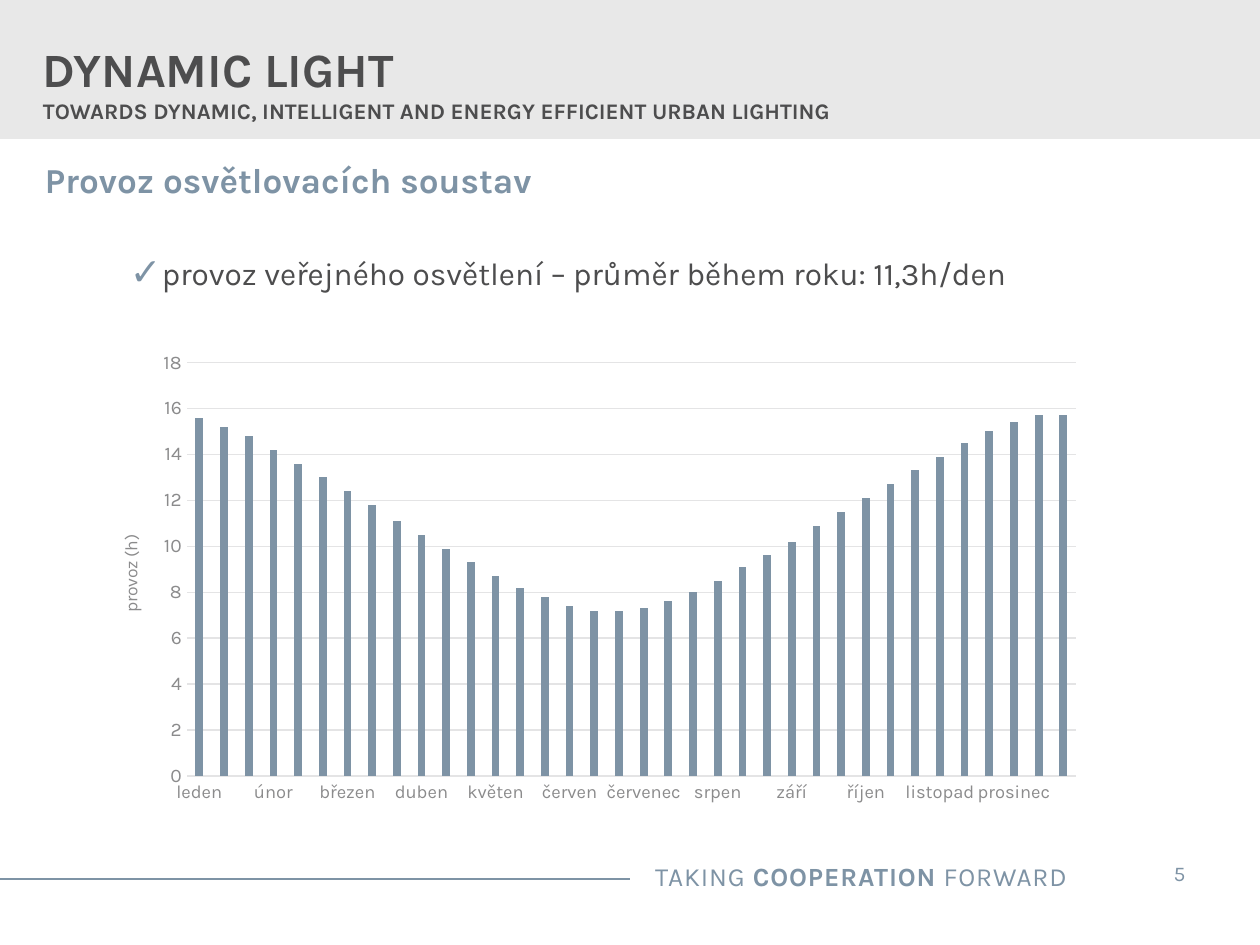
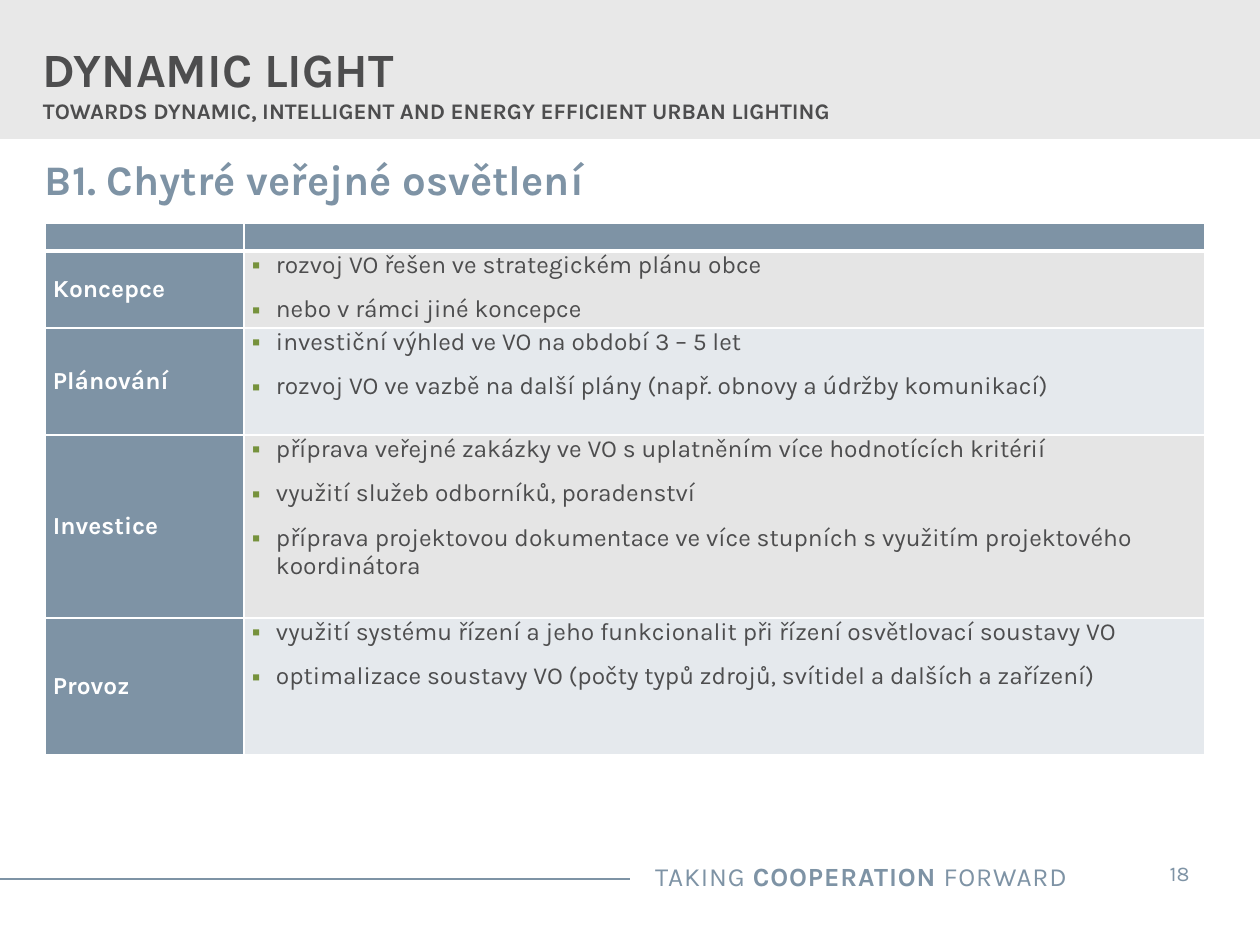
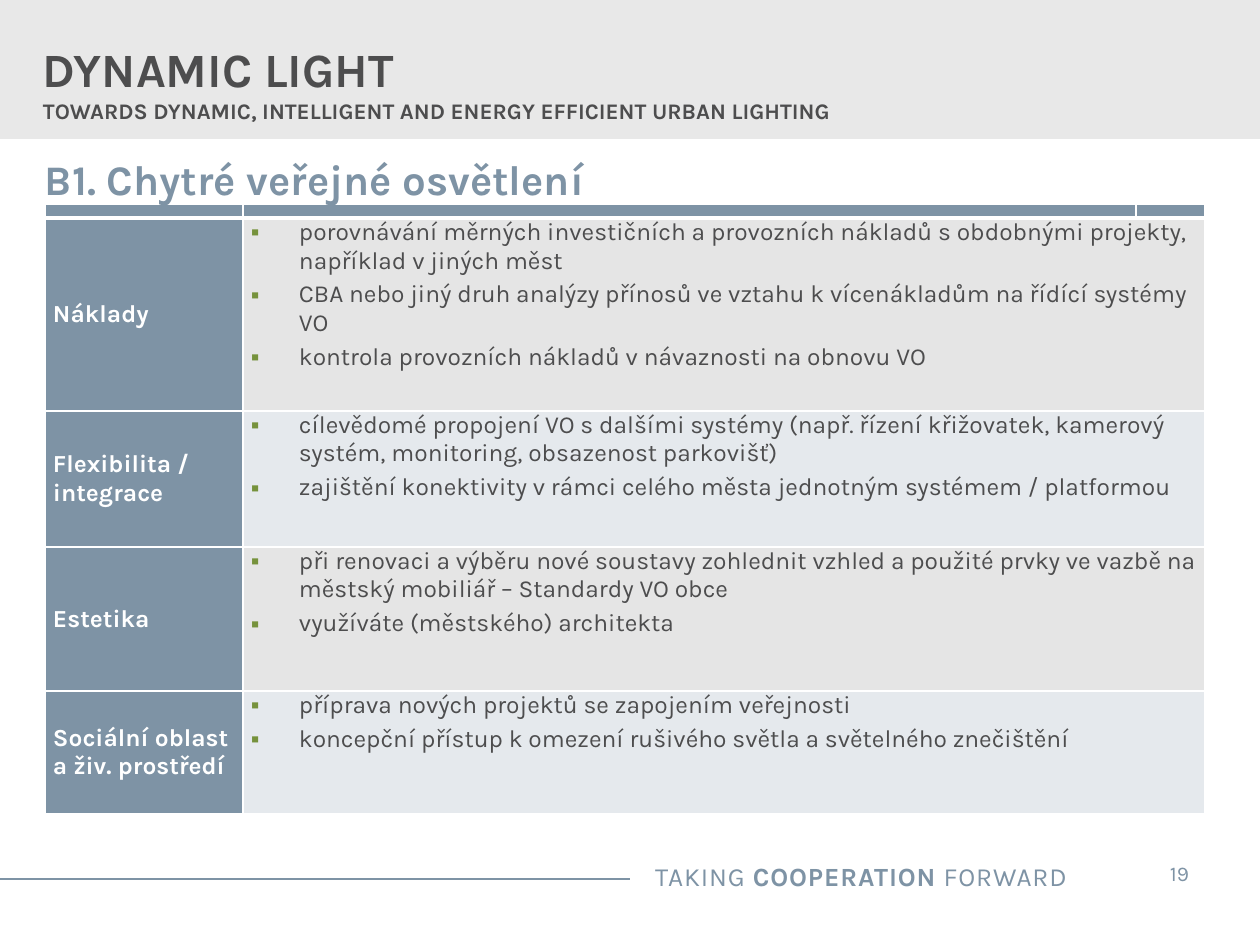
from dataclasses import dataclass

from lxml import etree
from pptx import Presentation
from pptx import util as u
from pptx.chart import data as chart_data
from pptx.dml import color as colors
from pptx.enum import chart as charts
from pptx.enum import shapes, text
from pptx.oxml import ns

SCALE = 914400 / 126


@dataclass(frozen=True)
class Theme:
    """Colours, type sizes and font shared by all slides."""

    font: str = "Karla"
    blue: str = "7E93A5"
    dark: str = "4D4D4E"
    grey: str = "8B8B8C"
    band: str = "E8E8E8"
    grid: str = "E4E4E5"
    green: str = "76923C"
    white: str = "FFFFFF"
    rows: tuple = ("E5E5E5", "E5E9ED")
    brand: float = 27.3
    motto: float = 12.7
    tagline: float = 15
    number: float = 12
    lead: float = 18
    cell: float = 14
    axis: float = 11
    category: float = 10.5
    axis_title: float = 10


THEME = Theme()

HOURS = [15.6, 15.2, 14.8, 14.2, 13.6, 13, 12.4, 11.8, 11.1, 10.5, 9.9, 9.3,
         8.7, 8.2, 7.8, 7.4, 7.2, 7.2, 7.3, 7.6, 8, 8.5, 9.1, 9.6,
         10.2, 10.9, 11.5, 12.1, 12.7, 13.3, 13.9, 14.5, 15, 15.4, 15.7, 15.7]
MONTHS = ["leden", "únor", "březen", "duben", "květen", "červen", "červenec",
          "srpen", "září", "říjen", "listopad", "prosinec"]

PLANNING = [
    ("Koncepce", ["rozvoj VO řešen ve strategickém plánu obce",
                  "nebo v rámci jiné koncepce"]),
    ("Plánování", ["investiční výhled ve VO na období 3 – 5 let",
                   "rozvoj VO ve vazbě na další plány (např. obnovy a údržby komunikací)"]),
    ("Investice", ["příprava veřejné zakázky ve VO s uplatněním více hodnotících kritérií",
                   "využití služeb odborníků, poradenství",
                   "příprava projektovou dokumentace ve více stupních s využitím "
                   "projektového koordinátora"]),
    ("Provoz", ["využití systému řízení a jeho funkcionalit při řízení osvětlovací soustavy VO",
                "optimalizace soustavy VO (počty typů zdrojů, svítidel a dalších a zařízení)"]),
]
BENEFITS = [
    ("Náklady", ["porovnávání měrných investičních a provozních nákladů s obdobnými "
                 "projekty, například v jiných měst",
                 "CBA nebo jiný druh analýzy přínosů ve vztahu k vícenákladům na "
                 "řídící systémy VO",
                 "kontrola provozních nákladů v návaznosti na obnovu VO"]),
    ("Flexibilita / integrace", [
        "cílevědomé propojení VO s dalšími systémy (např. řízení křižovatek, "
        "kamerový systém, monitoring, obsazenost parkovišť)",
        "zajištění konektivity v rámci celého města jednotným systémem / platformou"]),
    ("Estetika", ["při renovaci a výběru nové soustavy zohlednit vzhled a použité prvky "
                  "ve vazbě na městský mobiliář – Standardy VO obce",
                  "využíváte (městského) architekta"]),
    ("Sociální oblast a živ. prostředí", [
        "příprava nových projektů se zapojením veřejnosti",
        "koncepční přístup k omezení rušivého světla a světelného znečištění"]),
]


def px(length):
    """Turn a length in px into EMU."""
    return u.Emu(round(length * SCALE))


def rgb(value):
    """Turn a hex string into a colour."""
    return colors.RGBColor.from_string(value)


def apply(target, **values):
    """Set attributes from format values."""
    for name, value in values.items():
        setattr(target, name, value)


def set_font(font, size, color, bold=False):
    """Give a font the theme typeface, a size, a colour and a weight."""
    apply(font, name=THEME.font, size=u.Pt(size), bold=bold)
    font.color.rgb = rgb(color)


def add_run(paragraph, words, size, color, bold=False):
    """Add formatted words to a paragraph."""
    run = paragraph.add_run()
    run.text = words
    set_font(run.font, size, color, bold)
    return run


def add_box(slide, box, insets=(0, 0, 0, 0), **values):
    """Add a text box and return its first paragraph."""
    frame = slide.shapes.add_textbox(*map(px, box)).text_frame
    left, top, right, bottom = map(px, insets)
    apply(frame, **{"word_wrap": True, "margin_left": left, "margin_top": top,
                    "margin_right": right, "margin_bottom": bottom, **values})
    return frame.paragraphs[0]


def add_bullet(paragraph, symbol, color, hang, percent=100):
    """Give a paragraph a coloured bullet with a hanging indent."""
    properties = paragraph._p.get_or_add_pPr()
    apply_xml(properties, marL=px(hang), indent=-px(hang))
    bullet_color = etree.SubElement(properties, ns.qn("a:buClr"))
    etree.SubElement(bullet_color, ns.qn("a:srgbClr"), val=color)
    etree.SubElement(properties, ns.qn("a:buSzPct"), val=str(percent * 1000))
    etree.SubElement(properties, ns.qn("a:buFont"), typeface="Arial")
    etree.SubElement(properties, ns.qn("a:buChar"), char=symbol)


def apply_xml(element, **values):
    """Set XML attributes from format values."""
    for name, value in values.items():
        element.set(name, str(value))


def add_header(slide, box):
    """Draw the grey band with the project name and motto."""
    left, top, width, height = box
    band = slide.shapes.add_shape(shapes.MSO_SHAPE.RECTANGLE, *map(px, box))
    band.shadow.inherit = False
    band.fill.solid()
    band.fill.fore_color.rgb = rgb(THEME.band)
    band.line.fill.background()
    paragraph = add_box(slide, (left, top + 30, 910, 95), (43, 10, 13, 6))
    add_run(paragraph, "DYNAMIC LIGHT", THEME.brand, THEME.dark, True)
    paragraph.add_line_break()
    add_run(paragraph, "TOWARDS DYNAMIC, INTELLIGENT AND ENERGY EFFICIENT URBAN LIGHTING",
            THEME.motto, THEME.dark, True)


def add_footer(slide, box, number):
    """Draw the footer rule, tagline and page number."""
    left, top, width, height = box
    rule = slide.shapes.add_connector(
        shapes.MSO_CONNECTOR.STRAIGHT,
        *map(px, (left - 1, top + 31, left + width // 2, top + 31)))
    apply(rule.line, width=u.Pt(0.75))
    rule.line.color.rgb = rgb(THEME.blue)
    etree.SubElement(rule._element.spPr, ns.qn("a:effectLst"))
    tagline = add_box(slide, (left + 489, top + 6, 591, 44), (13, 6, 13, 6))
    tagline.alignment = text.PP_ALIGN.RIGHT
    for words, bold in (("TAKING ", False), ("COOPERATION", True), (" FORWARD", False)):
        run = add_run(tagline, words, THEME.tagline, THEME.blue, bold)
        apply_xml(run._r.get_or_add_rPr(), spc=50)
    page = add_box(slide, (left + 1133, top, 93, 50), (25, 13, 25, 13), word_wrap=False)
    page.alignment = text.PP_ALIGN.CENTER
    add_run(page, number, THEME.number, THEME.blue)


def add_title(slide, box, words, size, spacing=1.0):
    """Write the slide title."""
    paragraph = add_box(slide, box, vertical_anchor=text.MSO_ANCHOR.MIDDLE)
    paragraph.line_spacing = spacing
    add_run(paragraph, words, size, THEME.blue, True)


def add_lead(slide, box, words):
    """Write the ticked lead sentence."""
    paragraph = add_box(slide, box)
    add_bullet(paragraph, "✓", THEME.blue, 32, 120)
    add_run(paragraph, words, THEME.lead, THEME.dark)


def set_layout(element, index, **places):
    """Place a chart part by fractions of the chart."""
    layout = element.find(ns.qn("c:layout"))
    if layout is not None:
        element.remove(layout)
    layout = etree.Element(ns.qn("c:layout"))
    element.insert(index, layout)
    manual = etree.SubElement(layout, ns.qn("c:manualLayout"))
    if "w" in places:
        etree.SubElement(manual, ns.qn("c:layoutTarget"), val="inner")
    for mode in ("xMode", "yMode"):
        etree.SubElement(manual, ns.qn(f"c:{mode}"), val="edge")
    for name, value in places.items():
        etree.SubElement(manual, ns.qn(f"c:{name}"), val=str(value))


def add_hours_chart(slide, box):
    """Draw the daily lighting hours over the year."""
    data = chart_data.CategoryChartData(number_format="0.0")
    data.categories = [label for month in MONTHS for label in (month, "", "")]
    data.add_series("Series 1", HOURS)
    chart = slide.shapes.add_chart(
        charts.XL_CHART_TYPE.COLUMN_CLUSTERED, *map(px, box), data).chart
    apply(chart, has_legend=False, has_title=False)
    set_font(chart.font, THEME.axis_title, THEME.dark)
    plot = chart.plots[0]
    apply(plot, gap_width=219, overlap=-27, vary_by_categories=False)
    fill = plot.series[0].format.fill
    fill.solid()
    fill.fore_color.rgb = rgb(THEME.blue)

    months, hours = chart.category_axis, chart.value_axis
    for axis, size in ((months, THEME.category), (hours, THEME.axis)):
        apply(axis, major_tick_mark=charts.XL_TICK_MARK.NONE,
              minor_tick_mark=charts.XL_TICK_MARK.NONE)
        set_font(axis.tick_labels.font, size, THEME.grey)
    body = months._element.find(ns.qn("c:txPr")).find(ns.qn("a:bodyPr"))
    apply_xml(body, rot=-60000000, vert="horz")
    apply(hours, minimum_scale=0, maximum_scale=18, major_unit=2, has_major_gridlines=True)
    apply(hours.tick_labels, number_format="0", number_format_is_linked=False)
    hours.format.line.fill.background()
    for line in (months.format.line, hours.major_gridlines.format.line):
        line.width = u.Pt(0.75)
        line.color.rgb = rgb(THEME.grid)
    title = hours.axis_title
    paragraph = title.text_frame.paragraphs[0]
    add_run(paragraph, "provoz (h)", THEME.axis_title, THEME.grey)
    apply_xml(title.text_frame._txBody.bodyPr, rot=-5400000, vert="horz")
    set_layout(title._element, 1, x=0.03, y=0.41)
    set_layout(plot._element.getparent(), 0, x=0.1, y=0.05, w=0.88, h=0.88)


def style_cell(cell, fill, top=1, bottom=1):
    """Give a cell white borders, a fill and tight margins."""
    properties = cell._tc.get_or_add_tcPr()
    for side, width in (("L", 1), ("R", 1), ("T", top), ("B", bottom)):
        line = etree.SubElement(properties, ns.qn(f"a:ln{side}"), w=str(u.Pt(width)))
        solid = etree.SubElement(line, ns.qn("a:solidFill"))
        etree.SubElement(solid, ns.qn("a:srgbClr"), val=THEME.white)
    cell.fill.solid()
    cell.fill.fore_color.rgb = rgb(fill)
    apply(cell, margin_left=px(8), margin_right=px(8), margin_top=0, margin_bottom=0)


def add_topic_table(slide, box, topics, columns, rows, hang, gap):
    """Draw a table of topics with their bulleted points."""
    frame = slide.shapes.add_table(len(rows), len(columns), *map(px, box))
    table = frame.table
    for column, width in zip(table.columns, columns):
        column.width = px(width)
    for row, height in zip(table.rows, rows):
        row.height = px(height)
    for cell in table.rows[0].cells:
        style_cell(cell, THEME.blue, bottom=3)
        apply_xml(cell.text_frame.paragraphs[0]._p.get_or_add_endParaRPr(), sz=400)
    for index, (topic, points) in enumerate(topics, 1):
        label, *details = table.rows[index].cells
        top = 3 if index == 1 else 1
        style_cell(label, THEME.blue, top)
        label.vertical_anchor = text.MSO_ANCHOR.MIDDLE
        add_run(label.text_frame.paragraphs[0], topic, THEME.cell, THEME.white, True)
        for cell in details:
            style_cell(cell, THEME.rows[(index - 1) % 2], top)
        if len(details) > 1:
            details[0].merge(details[-1])
        body = details[0].text_frame
        for order, point in enumerate(points):
            paragraph = body.add_paragraph() if order else body.paragraphs[0]
            if order:
                paragraph.space_before = u.Pt(gap)
            add_bullet(paragraph, "▪", THEME.green, hang)
            add_run(paragraph, point, THEME.cell, THEME.dark)


def add_slide(presentation, number):
    """Add a blank slide with the shared header and footer."""
    slide = presentation.slides.add_slide(presentation.slide_layouts[6])
    add_header(slide, (0, 0, 1260, 139))
    add_footer(slide, (0, 848, 1260, 97), number)
    return slide


def main():
    """Build the three slides."""
    presentation = Presentation()
    apply(presentation, slide_width=px(1260), slide_height=px(945))

    slide = add_slide(presentation, "5")
    add_title(slide, (45, 145, 1190, 68), "Provoz osvětlovacích soustav", 20)
    add_lead(slide, (130, 254, 1045, 44),
             "provoz veřejného osvětlení – průměr během roku: 11,3h/den")
    add_hours_chart(slide, (86, 339, 1010, 470))

    heading = ((45, 144, 745, 76), "B1. Chytré veřejné osvětlení", 24, 0.91)
    slide = add_slide(presentation, "18")
    add_title(slide, *heading)
    add_topic_table(slide, (45, 223, 1160, 532), PLANNING, (199, 961),
                    (28, 77, 107, 183, 137), 24, 9)

    slide = add_slide(presentation, "19")
    add_topic_table(slide, (45, 204, 1160, 610), BENEFITS, (198, 893, 69),
                    (14, 193, 136, 144, 123), 48, 3)
    add_title(slide, *heading)
    presentation.save("out.pptx")


if __name__ == "__main__":
    main()
